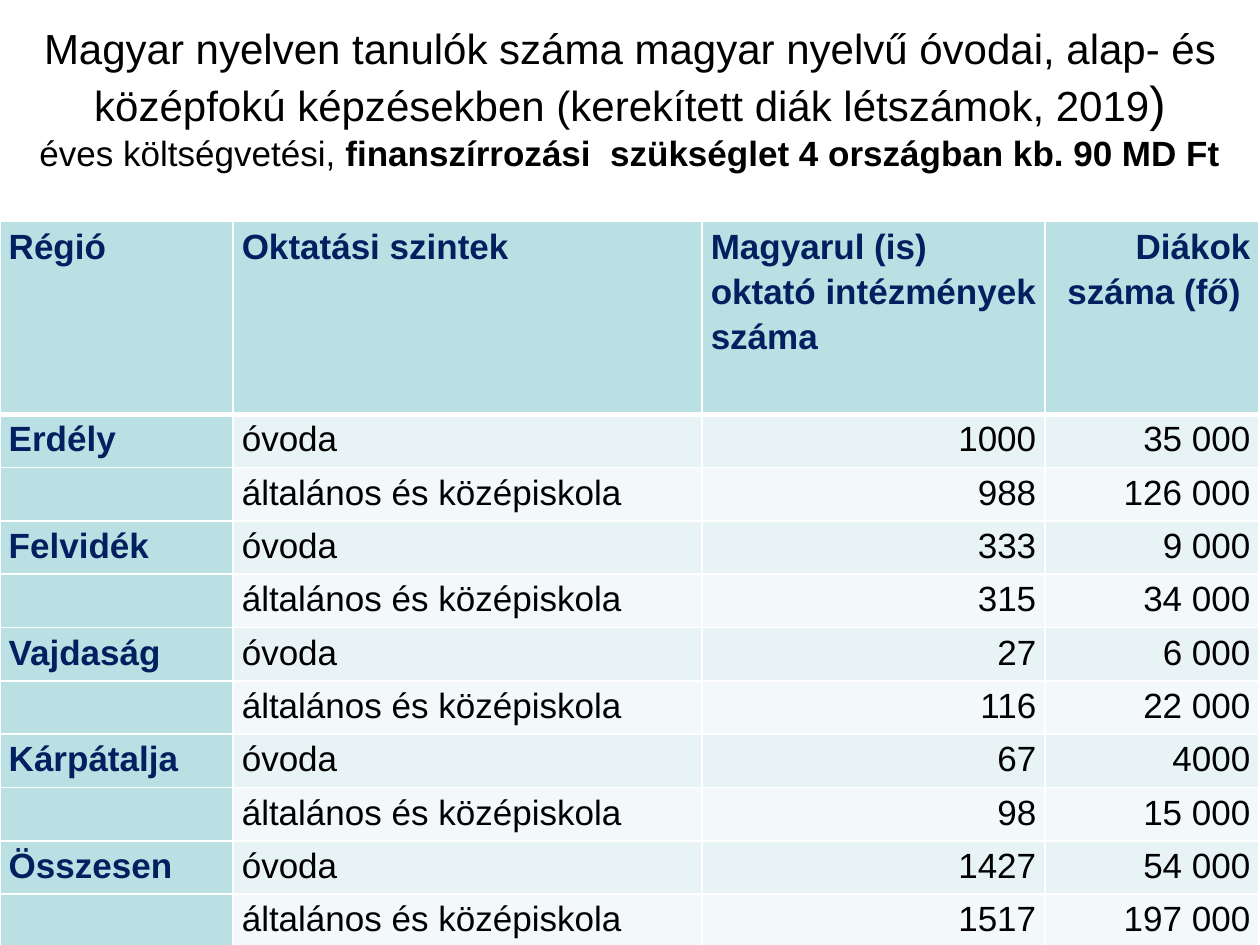
from lxml import etree
from pptx import Presentation
from pptx.dml.color import RGBColor
from pptx.enum.text import MSO_ANCHOR, PP_ALIGN
from pptx.oxml.ns import qn
from pptx.util import Pt

LEFT, RIGHT = PP_ALIGN.LEFT, PP_ALIGN.RIGHT
CENTER, JUSTIFY = PP_ALIGN.CENTER, PP_ALIGN.JUSTIFY
MIDDLE = MSO_ANCHOR.MIDDLE

FONT = "Arial"
BLACK, NAVY, WHITE = "000000", "002060", "FFFFFF"
TEAL, BANDS = "BBE0E3", ("E7F3F4", "F3F9FA")

COL_WIDTHS = (133.2, 268, 196, 122.4)
HEADER_HEIGHT, ROW_HEIGHT = 110, 30.5
HEADERS = ("Régió", "Oktatási szintek",
           "Magyarul (is) oktató intézmények száma", "Diákok száma (fő) ")
LEVELS = ("óvoda", "általános és középiskola")
REGIONS = (
    ("Erdély", (("1000", "35 000"), ("988", "126 000"))),
    ("Felvidék", (("333", "9 000"), ("315", "34 000"))),
    ("Vajdaság", (("27", "6 000"), ("116", "22 000"))),
    ("Kárpátalja", (("67", "4000"), ("98", "15 000"))),
    ("Összesen", (("1427", "54 000"), ("1517", "197 000"))),
)


def rgb(value):
    return RGBColor.from_string(value)


def add_run(p, text, size, color=BLACK, bold=False):
    r = p.add_run()
    r.text = text
    r.font.name = FONT
    r.font.size = Pt(size)
    r.font.bold = bold
    r.font.color.rgb = rgb(color)


def set_borders(cell, top, bottom):
    tc_pr = cell._tc.get_or_add_tcPr()
    widths = (("lnL", 1), ("lnR", 1), ("lnT", top), ("lnB", bottom))
    for i, (side, width) in enumerate(widths):
        ln = etree.Element(qn(f"a:{side}"), w=str(Pt(width)))
        fill = etree.SubElement(ln, qn("a:solidFill"))
        etree.SubElement(fill, qn("a:srgbClr"), val=WHITE)
        tc_pr.insert(i, ln)


def fill_cell(cell, text, align, fill, color, bold, top=1, bottom=1):
    cell.fill.solid()
    cell.fill.fore_color.rgb = rgb(fill)
    set_borders(cell, top, bottom)
    if not text:
        return
    cell.margin_left = cell.margin_right = Pt(5)
    cell.margin_top = cell.margin_bottom = 0
    p = cell.text_frame.paragraphs[0]
    p.alignment = align
    p.line_spacing = 1.15
    add_run(p, text, 20, color, bold)


def add_title(slide, x, y, w, h):
    tf = slide.shapes.add_textbox(Pt(x), Pt(y), Pt(w), Pt(h)).text_frame
    tf.word_wrap = True
    tf.vertical_anchor = MIDDLE
    p = tf.paragraphs[0]
    p.alignment = CENTER
    add_run(p, "Magyar nyelven tanulók száma magyar nyelvű óvodai, alap- és "
               "középfokú képzésekben (kerekített diák létszámok, 2019", 24)
    add_run(p, ")", 28)
    p.add_line_break()
    add_run(p, "éves költségvetési, ", 20)
    add_run(p, "finanszírrozási  szükséglet 4 országban kb. 90 MD Ft", 20, bold=True)


def add_student_table(slide, x, y):
    rows = [(region if i == 0 else "", LEVELS[i], *counts)
            for region, levels in REGIONS for i, counts in enumerate(levels)]
    height = HEADER_HEIGHT + ROW_HEIGHT * len(rows)
    table = slide.shapes.add_table(len(rows) + 1, len(COL_WIDTHS), Pt(x), Pt(y),
                                   Pt(sum(COL_WIDTHS)), Pt(height)).table
    for col, width in zip(table.columns, COL_WIDTHS):
        col.width = Pt(width)
    for i, row in enumerate(table.rows):
        row.height = Pt(ROW_HEIGHT if i else HEADER_HEIGHT)

    for c, (text, align) in enumerate(zip(HEADERS, (LEFT, LEFT, LEFT, RIGHT))):
        fill_cell(table.cell(0, c), text, align, TEAL, NAVY, True, bottom=3)
    for i, row in enumerate(rows):
        for c, (text, align) in enumerate(zip(row, (JUSTIFY, LEFT, RIGHT, RIGHT))):
            first = c == 0
            fill_cell(table.cell(i + 1, c), text, align,
                      TEAL if first else BANDS[i % 2],
                      NAVY if first else BLACK, first, top=1 if i else 3)


def main():
    prs = Presentation()
    prs.slide_width, prs.slide_height = Pt(720), Pt(540)
    slide = prs.slides.add_slide(prs.slide_layouts[6])
    add_title(slide, 0, 0, 720, 111.6)
    add_student_table(slide, 0, 126.7)
    prs.save("out.pptx")


if __name__ == "__main__":
    main()
